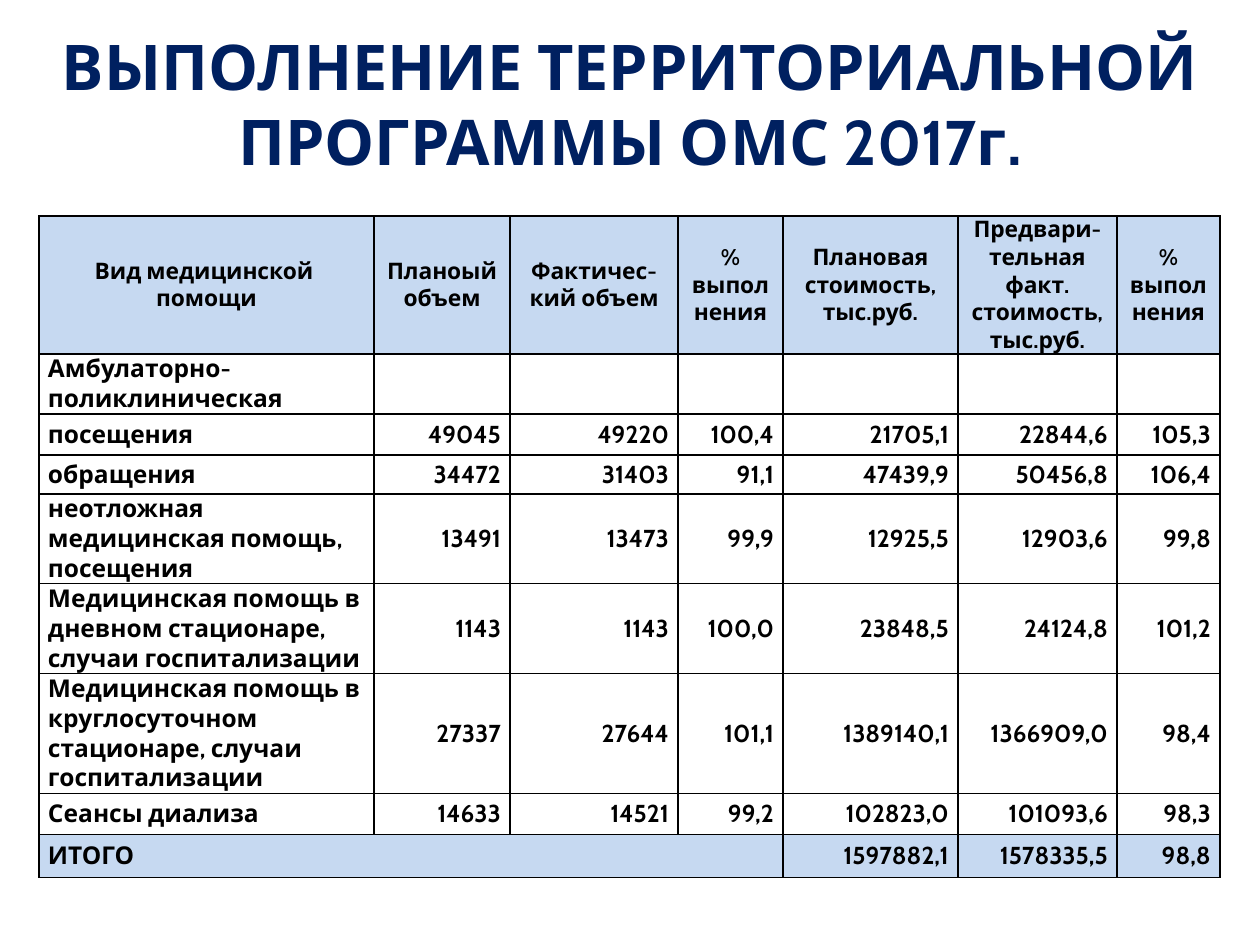
from dataclasses import dataclass

from lxml.etree import SubElement
from pptx import Presentation
from pptx.dml.color import RGBColor
from pptx.enum.text import MSO_ANCHOR, MSO_AUTO_SIZE, PP_ALIGN
from pptx.oxml.ns import qn
from pptx.util import Emu, Pt

PX_PER_INCH = 126


def px(length: int) -> Emu:
    return Emu(round(length * 914400 / PX_PER_INCH))


@dataclass(frozen=True)
class Theme:
    font: str = "Cabin"
    title_color: str = "002060"
    ink: str = "000000"
    band: str = "C6D9F1"
    paper: str = "FFFFFF"
    title_size: int = 36
    header_size: int = 13
    body_size: int = 14
    border_width: int = 1


@dataclass(frozen=True)
class CareRow:
    height: int
    label: str
    figures: tuple[str, ...] = ("",) * 6


THEME = Theme()
TITLE = "ВЫПОЛНЕНИЕ ТЕРРИТОРИАЛЬНОЙ ПРОГРАММЫ ОМС 2017г."
COLUMN_WIDTHS = (335, 136, 168, 105, 175, 159, 103)
HEADER_HEIGHT = 138
HEADERS = (
    "Вид медицинской \nпомощи",
    "Планоый объем",
    "Фактичес-кий объем",
    "% выполнения",
    "Плановая стоимость, тыс.руб.",
    "Предвари-тельная факт. стоимость, тыс.руб.",
    "% выполнения",
)
CARE_ROWS = (
    CareRow(60, "Амбулаторно-поликлиническая"),
    CareRow(41, "посещения",
            ("49045", "49220", "100,4", "21705,1", "22844,6", "105,3")),
    CareRow(39, "обращения",
            ("34472", "31403", "91,1", "47439,9", "50456,8", "106,4")),
    CareRow(89, "неотложная медицинская помощь, посещения",
            ("13491", "13473", "99,9", "12925,5", "12903,6", "99,8")),
    CareRow(90, "Медицинская помощь в дневном стационаре, случаи госпитализации",
            ("1143", "1143", "100,0", "23848,5", "24124,8", "101,2")),
    CareRow(120, "Медицинская помощь в круглосуточном стационаре, случаи госпитализации",
            ("27337", "27644", "101,1", "1389140,1", "1366909,0", "98,4")),
    CareRow(41, "Сеансы диализа",
            ("14633", "14521", "99,2", "102823,0", "101093,6", "98,3")),
)
TOTAL = CareRow(43, "ИТОГО", ("", "", "", "1597882,1", "1578335,5", "98,8"))


def format_text(text_frame, size: int, color: str, align: PP_ALIGN) -> None:
    for paragraph in text_frame.paragraphs:
        paragraph.alignment = align
        for run in paragraph.runs:
            run.font.name = THEME.font
            run.font.size = Pt(size)
            run.font.bold = True
            run.font.color.rgb = RGBColor.from_string(color)


def add_borders(cell) -> None:
    properties = cell._tc.get_or_add_tcPr()
    for position, side in enumerate(("a:lnL", "a:lnR", "a:lnT", "a:lnB")):
        line = SubElement(properties, qn(side), w=str(Pt(THEME.border_width)))
        fill = SubElement(line, qn("a:solidFill"))
        SubElement(fill, qn("a:srgbClr"), val=THEME.ink)
        properties.insert(position, line)


def fill_cell(cell, text: str, size: int, align: PP_ALIGN, fill: str) -> None:
    cell.margin_left = cell.margin_right = px(9)
    cell.margin_top = cell.margin_bottom = 0
    cell.vertical_anchor = MSO_ANCHOR.MIDDLE
    cell.fill.solid()
    cell.fill.fore_color.rgb = RGBColor.from_string(fill)
    add_borders(cell)
    if text:
        cell.text_frame.text = text
        format_text(cell.text_frame, size, THEME.ink, align)


def add_title(slide) -> None:
    title = slide.shapes.title
    title.left, title.top, title.width, title.height = map(px, (0, 38, 1260, 130))
    title.text_frame.text = TITLE
    title.text_frame.auto_size = MSO_AUTO_SIZE.NONE
    title.text_frame.vertical_anchor = MSO_ANCHOR.MIDDLE
    format_text(title.text_frame, THEME.title_size, THEME.title_color, PP_ALIGN.CENTER)


def add_care_table(slide) -> None:
    rows = (*CARE_ROWS, TOTAL)
    heights = (HEADER_HEIGHT, *(row.height for row in rows))
    table = slide.shapes.add_table(
        len(heights), len(COLUMN_WIDTHS), px(39), px(216),
        px(sum(COLUMN_WIDTHS)), px(sum(heights))).table
    for column, width in zip(table.columns, COLUMN_WIDTHS):
        column.width = px(width)
    for table_row, height in zip(table.rows, heights):
        table_row.height = px(height)

    # Header
    for column, header in enumerate(HEADERS):
        fill_cell(table.cell(0, column), header, THEME.header_size,
                  PP_ALIGN.CENTER, THEME.band)

    # Kinds of care and the total
    for index, row in enumerate(rows, start=1):
        fill = THEME.band if row is TOTAL else THEME.paper
        for column, text in enumerate((row.label, *row.figures)):
            align = PP_ALIGN.RIGHT if column else PP_ALIGN.LEFT
            fill_cell(table.cell(index, column), text, THEME.body_size, align, fill)
    table.cell(len(rows), 0).merge(table.cell(len(rows), 3))


def main() -> None:
    presentation = Presentation()
    presentation.slide_width, presentation.slide_height = px(1260), px(945)
    slide = presentation.slides.add_slide(presentation.slide_layouts[5])
    add_title(slide)
    add_care_table(slide)
    presentation.save("out.pptx")


if __name__ == "__main__":
    main()
